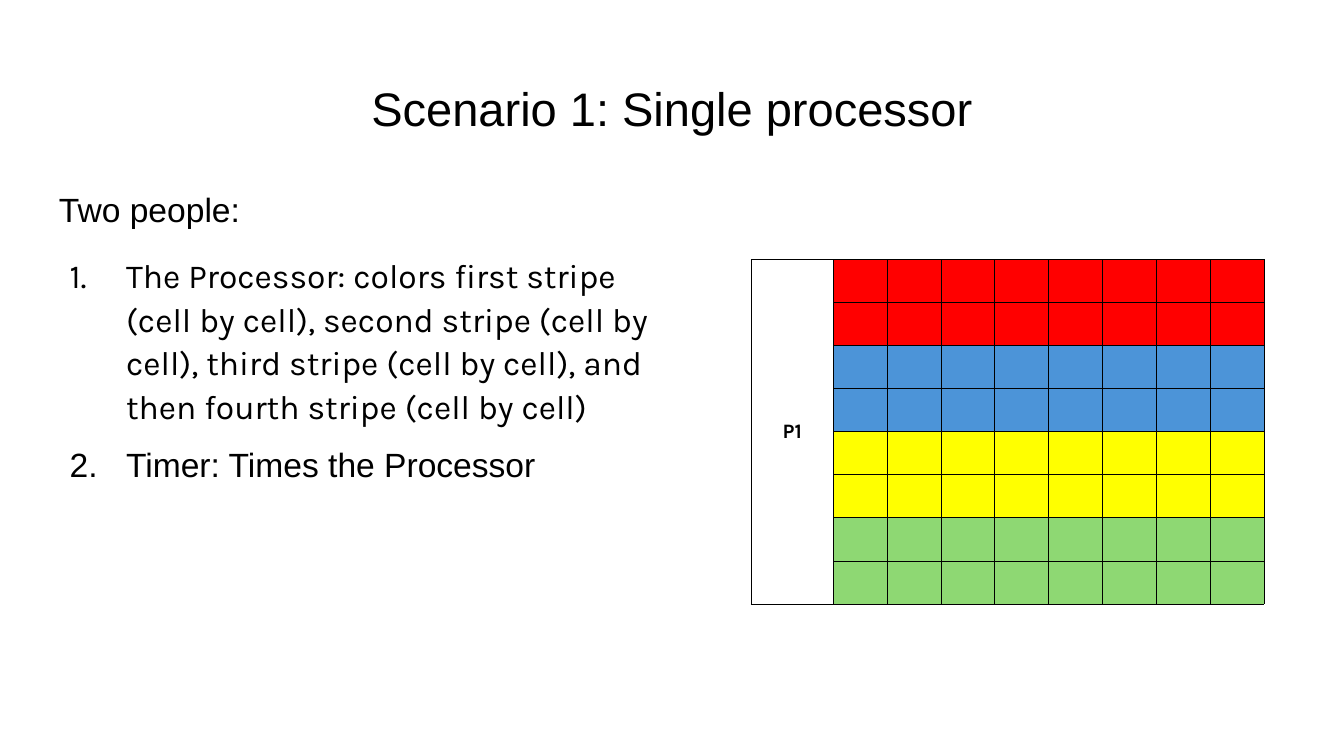
from lxml.etree import SubElement
from pptx import Presentation
from pptx.dml.color import RGBColor
from pptx.enum.text import MSO_ANCHOR, PP_ALIGN
from pptx.oxml.ns import qn
from pptx.util import Pt

COLORS = {
    "black": "000000",
    "red": "FF0000",
    "blue": "4C94D8",
    "yellow": "FFFF00",
    "green": "8ED873",
}
STRIPES = ["red", "blue", "yellow", "green"]
ROWS_PER_STRIPE = 2
CELLS_PER_ROW = 8
LABEL_WIDTH = 44
CELL_WIDTH = 28.85
ROW_HEIGHT = 23.1


def format_paragraph(paragraph, size, font_name="Arial", bold=False):
    for run in paragraph.runs:
        run.font.name = font_name
        run.font.size = Pt(size)
        run.font.bold = bold
        run.font.color.rgb = RGBColor.from_string(COLORS["black"])


def add_text(slide, left, top, width, height, lines):
    shape = slide.shapes.add_textbox(Pt(left), Pt(top), Pt(width), Pt(height))
    text_frame = shape.text_frame
    text_frame.word_wrap = True
    text_frame.margin_left = text_frame.margin_right = Pt(7.2)
    text_frame.margin_top = text_frame.margin_bottom = Pt(7.2)
    text_frame.text = "\n".join(lines)
    return text_frame


def number_paragraph(paragraph):
    properties = paragraph._p.get_or_add_pPr()
    properties.set("marL", str(Pt(36)))
    properties.set("indent", str(-Pt(30.25)))
    color = SubElement(properties, qn("a:buClr"))
    SubElement(color, qn("a:srgbClr"), val=COLORS["black"])
    SubElement(properties, qn("a:buAutoNum"), type="arabicPeriod")


def add_title(slide):
    text_frame = add_text(slide, 24.5, 35, 671, 45.5, ["Scenario 1: Single processor"])
    text_frame.vertical_anchor = MSO_ANCHOR.MIDDLE
    title = text_frame.paragraphs[0]
    title.alignment = PP_ALIGN.CENTER
    format_paragraph(title, 25.2)


def add_roles(slide):
    text_frame = add_text(slide, 24.5, 91, 343, 269, [
        "Two people:",
        "The Processor: colors first stripe (cell by cell), second stripe "
        "(cell by cell), third stripe (cell by cell), and then fourth stripe "
        "(cell by cell)",
        "Timer: Times the Processor",
    ])
    heading, processor, timer = text_frame.paragraphs
    heading.line_spacing = 1.15
    format_paragraph(heading, 18)
    for role, font_name, space in ((processor, "Karla", 12), (timer, "Arial", 8)):
        number_paragraph(role)
        role.line_spacing = 1.08
        role.space_before = Pt(space)
        format_paragraph(role, 18, font_name)
    timer.space_after = Pt(8)


def add_borders(cell):
    properties = cell._tc.get_or_add_tcPr()
    for side in ("lnL", "lnR", "lnT", "lnB"):
        line = SubElement(properties, qn(f"a:{side}"), w=str(Pt(0.5)))
        fill = SubElement(line, qn("a:solidFill"))
        SubElement(fill, qn("a:srgbClr"), val=COLORS["black"])


def style_cell(cell, color=None):
    cell.margin_left = cell.margin_right = Pt(5)
    cell.margin_top = cell.margin_bottom = 0
    add_borders(cell)
    if color:
        cell.fill.solid()
        cell.fill.fore_color.rgb = RGBColor.from_string(COLORS[color])
    else:
        cell.fill.background()


def add_stripe_table(slide):
    row_count = len(STRIPES) * ROWS_PER_STRIPE
    width = LABEL_WIDTH + CELLS_PER_ROW * CELL_WIDTH
    table = slide.shapes.add_table(
        row_count, CELLS_PER_ROW + 1,
        Pt(402.5), Pt(139), Pt(width), Pt(row_count * ROW_HEIGHT),
    ).table
    table.first_row = False
    table.horz_banding = False
    for index, column in enumerate(table.columns):
        column.width = Pt(CELL_WIDTH if index else LABEL_WIDTH)
    for row_index, row in enumerate(table.rows):
        row.height = Pt(ROW_HEIGHT)
        stripe = STRIPES[row_index // ROWS_PER_STRIPE]
        for column_index, cell in enumerate(row.cells):
            style_cell(cell, stripe if column_index else None)
    label = table.cell(0, 0)
    label.merge(table.cell(row_count - 1, 0))
    label.vertical_anchor = MSO_ANCHOR.MIDDLE
    label.text_frame.text = "P1"
    paragraph = label.text_frame.paragraphs[0]
    paragraph.alignment = PP_ALIGN.CENTER
    format_paragraph(paragraph, 11, "Karla", bold=True)


def main():
    presentation = Presentation()
    presentation.slide_width = Pt(720)
    presentation.slide_height = Pt(405)
    slide = presentation.slides.add_slide(presentation.slide_layouts[6])
    add_title(slide)
    add_roles(slide)
    add_stripe_table(slide)
    presentation.save("out.pptx")


if __name__ == "__main__":
    main()
